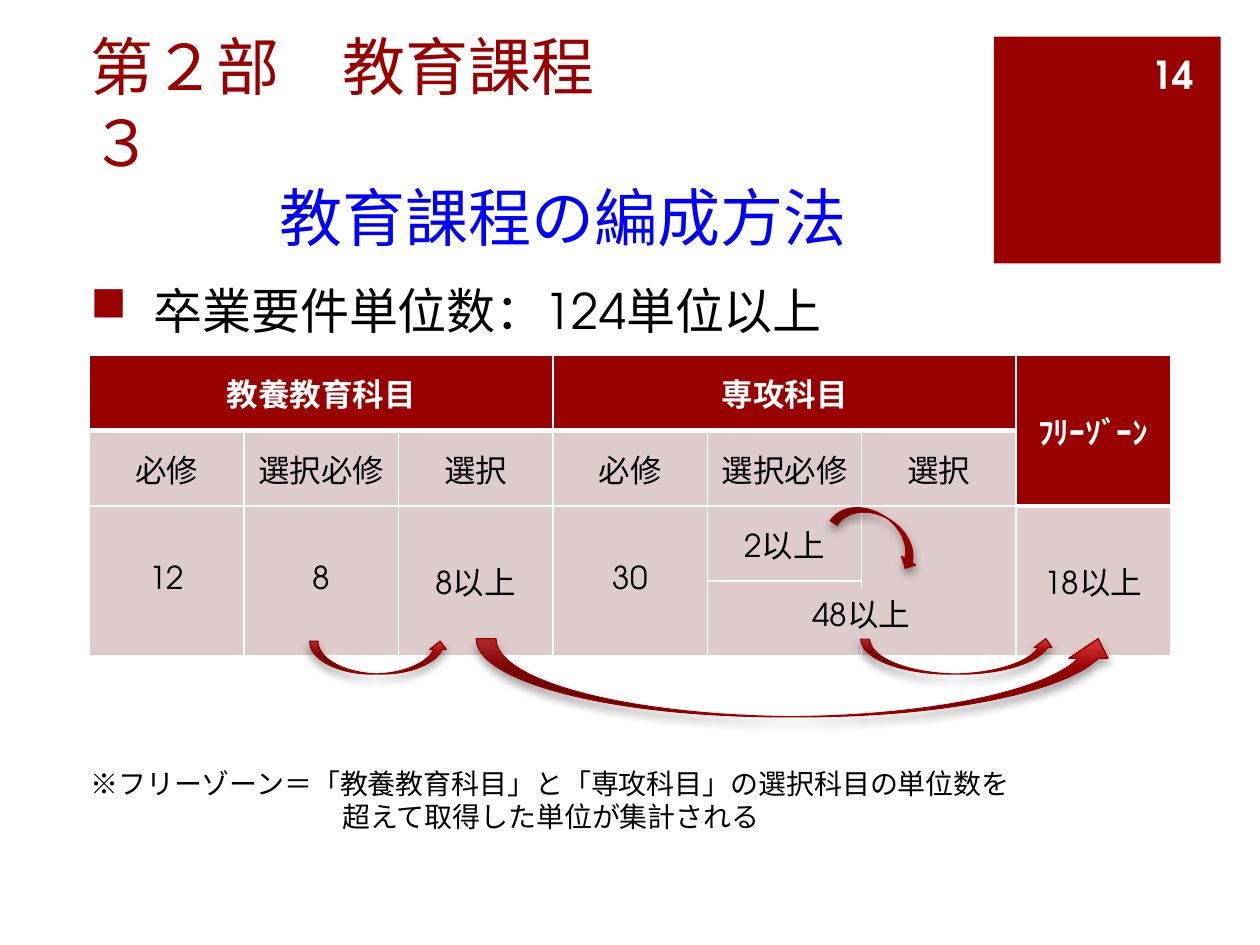
from lxml import etree
from pptx import Presentation
from pptx.dml.color import RGBColor
from pptx.enum import shapes, text
from pptx.oxml import parse_xml
from pptx.oxml.ns import nsdecls, qn
from pptx.util import Pt

COLORS = {"red": "990000", "blue": "0000FF", "white": "FFFFFF", "black": "000000",
          "label": "DECCCC", "value": "DECBCB"}
GRADIENT = {0: "6C0000", 60: "960000", 100: "DC3838"}
FONT = "TeX Gyre Adventor"
CENTER, RIGHT = text.PP_ALIGN.CENTER, text.PP_ALIGN.RIGHT
MIDDLE, BOTTOM = text.MSO_ANCHOR.MIDDLE, text.MSO_ANCHOR.BOTTOM


def color(name):
    return RGBColor.from_string(COLORS[name])


class SlideBuilder:
    """Hold the style and the current slide, and add each kind of element."""

    def __init__(self, page):
        self.page = page

    def fill_text(self, frame, lines, align=None, **style):
        for index, line in enumerate(lines):
            para = frame.paragraphs[0] if index == 0 else frame.add_paragraph()
            content, indent, special = line if isinstance(line, tuple) else (line, 0, {})
            para.alignment = align
            if indent:
                para._p.get_or_add_pPr().set("marL", str(Pt(indent)))
            span = para.add_run()
            span.text = content
            values = {"name": FONT, "bold": False, "color": "black", **style, **special}
            span.font.color.rgb = color(values.pop("color"))
            for key, value in values.items():
                setattr(span.font, key, value)

    def text_box(self, place, lines, anchor=MIDDLE, **style):
        box = self.page.shapes.add_textbox(*map(Pt, place))
        box.text_frame.word_wrap = True
        box.text_frame.vertical_anchor = anchor
        self.fill_text(box.text_frame, lines, **style)
        return box

    def bullet_box(self, place, content, **style):
        box = self.text_box(place, [(content, 36, {})], **style)
        properties = box.text_frame.paragraphs[0]._p.get_or_add_pPr()
        properties.set("indent", str(Pt(-36)))
        tint = etree.SubElement(properties, qn("a:buClr"))
        etree.SubElement(tint, qn("a:srgbClr"), val=COLORS["red"])
        etree.SubElement(properties, qn("a:buChar"), char="■")

    def rectangle(self, place, fill, lines=(), **style):
        box = self.page.shapes.add_shape(shapes.MSO_SHAPE.RECTANGLE, *map(Pt, place))
        box.shadow.inherit = False
        box.fill.solid()
        box.fill.fore_color.rgb = color(fill)
        box.line.fill.background()
        self.fill_text(box.text_frame, lines, **style)

    def arrow(self, place, kind=shapes.MSO_SHAPE.CURVED_UP_ARROW, rotation=0):
        arrow = self.page.shapes.add_shape(kind, *map(Pt, place))
        arrow.rotation = rotation
        arrow.line.color.rgb = color("red")
        arrow.line.width = Pt(0.75)
        arrow.shadow.inherit = False
        arrow.fill.gradient()
        properties = arrow._element.spPr
        stops = "".join(f'<a:gs pos="{stop * 1000}"><a:srgbClr val="{tint}"/></a:gs>'
                        for stop, tint in GRADIENT.items())
        properties.replace(properties.find(qn("a:gradFill")), parse_xml(
            f'<a:gradFill {nsdecls("a")} rotWithShape="1"><a:gsLst>{stops}</a:gsLst>'
            '<a:lin ang="16200000" scaled="0"/></a:gradFill>'))
        properties.find(qn("a:effectLst")).append(parse_xml(
            f'<a:outerShdw {nsdecls("a")} blurRad="{Pt(5.2)}" dist="{Pt(3)}" dir="5400000" '
            'rotWithShape="0"><a:srgbClr val="000000"><a:alpha val="40000"/>'
            '</a:srgbClr></a:outerShdw>'))

    def borders(self, cell, **widths):
        properties = cell._tc.get_or_add_tcPr()
        for index, side in enumerate("LRTB"):
            properties.insert(index, parse_xml(
                f'<a:ln{side} {nsdecls("a")} w="{Pt(widths.get(side, 1))}"><a:solidFill>'
                f'<a:srgbClr val="{COLORS["white"]}"/></a:solidFill></a:ln{side}>'))

    def table(self, place, rows, merges):
        count = len(rows[0])
        table = self.page.shapes.add_table(len(rows), count, *map(Pt, place)).table
        table.first_row = table.horz_banding = False
        for line in table.columns:
            line.width = Pt(place[2] / count)
        for line in table.rows:
            line.height = Pt(place[3] / len(rows))
        for top, left, bottom, right in merges:
            table.cell(top, left).merge(table.cell(bottom, right))
        for row, contents in enumerate(rows):
            for column, content in enumerate(contents):
                cell = table.cell(row, column)
                depth = 2 if column == count - 1 else 1
                header = row < depth
                cell.vertical_anchor = MIDDLE
                cell.fill.solid()
                cell.fill.fore_color.rgb = color(
                    "red" if header else "label" if row == 1 else "value")
                self.borders(cell, T=3 if row == depth else 1, B=3 if header else 1)
                if content:
                    self.fill_text(cell.text_frame, [content], CENTER, size=Pt(18),
                                   bold=header, color="white" if header else "black")


def main():
    deck = Presentation()
    deck.slide_width, deck.slide_height = Pt(720), Pt(540)
    slide = SlideBuilder(deck.slides.add_slide(deck.slide_layouts[6]))

    slide.rectangle((568, 21, 129.6, 129.6), "red")
    slide.table((51.2, 203.2, 617.8, 171.8), [
        ["教養教育科目", "", "", "専攻科目", "", "", "ﾌﾘｰｿﾞｰﾝ"],
        ["必修", "選択必修", "選択"] * 2 + [""],
        ["12", "8", "8以上", "30", "2以上", "", "18以上"],
        [""] * 7,
    ], [(0, 0, 0, 2), (0, 3, 0, 5), (0, 6, 1, 6)]
        + [(2, column, 3, column) for column in (0, 1, 2, 3, 5, 6)])

    slide.text_box((44.6, 44.6, 522, 104.4), [
        "第２部　教育課程", "３", ("教育課程の編成方法", 108, {"color": "blue"})],
        BOTTOM, size=Pt(36), color="red")
    slide.bullet_box((44.6, 157, 579, 40), "卒業要件単位数：124単位以上", size=Pt(28))
    slide.text_box((44.6, 432, 579, 50), [
        "※フリーゾーン＝「教養教育科目」と「専攻科目」の選択科目の単位数を",
        ("超えて取得した単位が集計される", 144, {})], size=Pt(16))
    slide.text_box((650, 28, 39.6, 28.8), ["14"], align=RIGHT, size=Pt(22),
                   bold=True, color="white")

    for place in ((177, 366.5, 79.2, 18.7), (272.2, 365, 366.5, 44.6),
                  (491.8, 365, 110.9, 20.2)):
        slide.arrow(place)
    slide.rectangle((413.3, 336.2, 157.7, 28.8), "value", ["48以上"],
                    align=CENTER, size=Pt(18))
    slide.arrow((475.2, 295.2, 55.4, 18.7), shapes.MSO_SHAPE.CURVED_DOWN_ARROW, 32.3)
    deck.save("out.pptx")


if __name__ == "__main__":
    main()
